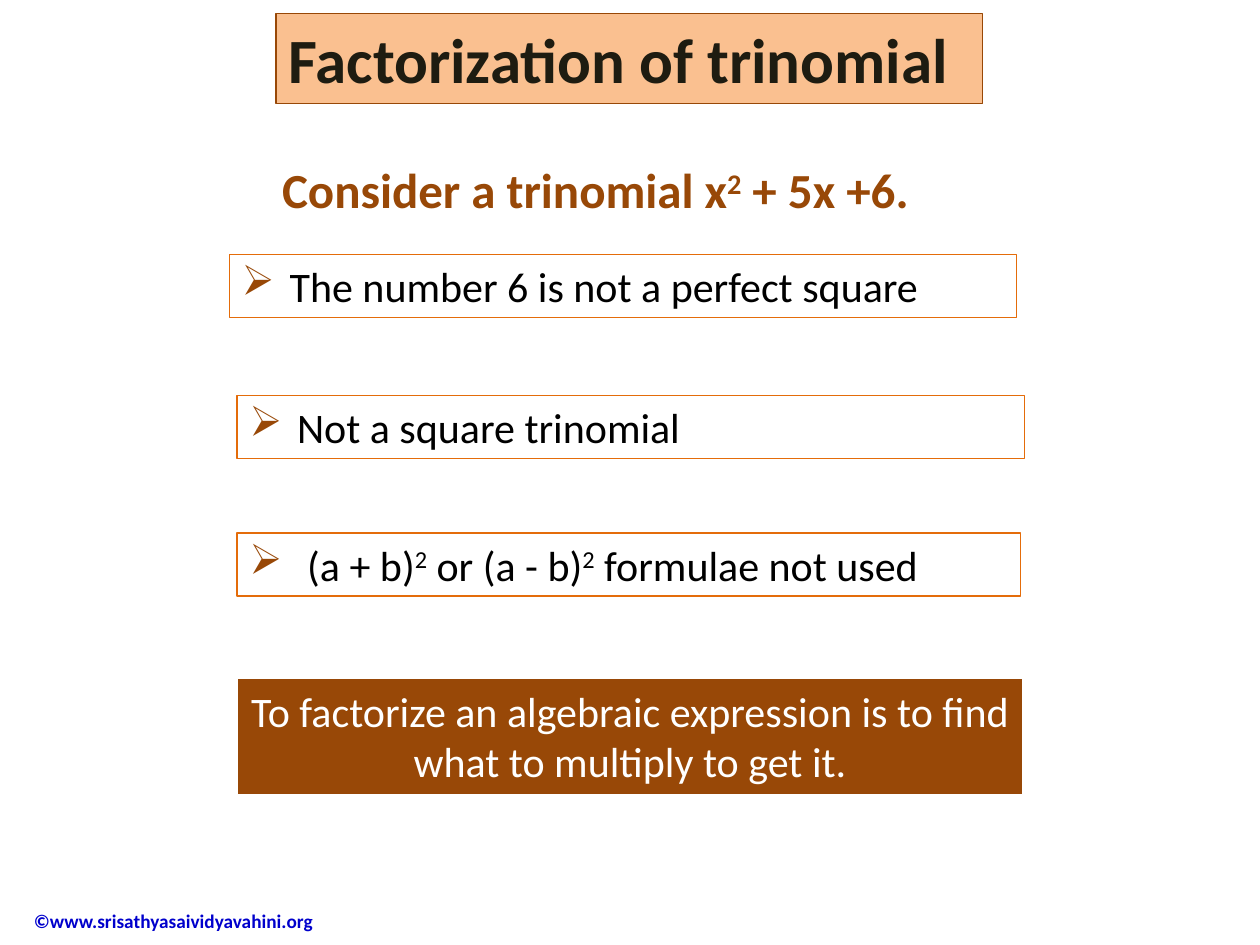
from pptx import Presentation, util as u
from pptx.dml.color import RGBColor
from pptx.enum import shapes, text
from pptx.oxml.ns import qn
from lxml import etree

THEME = dict(font="Calibri", brown="984807", peach="FAC090", orange="E46C0A",
             dark="1E1C11", black="000000", white="FFFFFF", blue="0000CC",
             title=36, lead=28, body=24, note=11)

# "^" marks the next character as a superscript.
TITLE = ("Factorization of trinomial", (2.19, 0.11, 5.61, 0.71))
LEAD = ("Consider a trinomial x^2 + 5x +6.", (2.14, 1.22, 5.35, 0.57))
# Text, place, bullet indent
POINTS = [
    ("The number 6 is not a perfect square", (1.82, 2.02, 6.25, 0.5), 0.38),
    ("Not a square trinomial", (1.88, 3.14, 6.25, 0.5), 0.38),
    ("(a + b)^2 or (a - b)^2 formulae not used", (1.88, 4.23, 6.22, 0.5), 0.46),
]
CLOSE = ("To factorize an algebraic expression is to find what to multiply "
         "to get it.", (1.89, 5.39, 6.22, 0.91))
NOTE = ("©www.srisathyasaividyavahini.org", (0.17, 7.1, 2.52, 0.41))


def rgb(name):
    return RGBColor.from_string(THEME[name])


def inches(place):
    return [u.Inches(v) for v in place]


def paint(shape, fill=None, line=None):
    if fill:
        shape.fill.solid()
        shape.fill.fore_color.rgb = rgb(fill)
    else:
        shape.fill.background()
    shape.line.color.rgb = rgb(line)
    shape.line.width = u.Pt(0.75)


def bullet(para, indent):
    """Give the paragraph a brown arrow bullet with a hanging indent."""
    props = para._p.get_or_add_pPr()
    props.set("marL", str(u.Inches(indent)))
    props.set("indent", str(-u.Inches(indent)))
    tint = etree.SubElement(props, qn("a:buClr"))
    etree.SubElement(tint, qn("a:srgbClr"), val=THEME["brown"])
    etree.SubElement(props, qn("a:buChar"), char="➢")


def write(shape, words, size="body", color="black", bold=False, wrap=True,
          align="LEFT", anchor="TOP", indent=None):
    frame = shape.text_frame
    frame.word_wrap = wrap
    frame.auto_size = text.MSO_AUTO_SIZE.NONE
    frame.vertical_anchor = getattr(text.MSO_ANCHOR, anchor)
    para = frame.paragraphs[0]
    para.alignment = getattr(text.PP_ALIGN, align)
    if indent:
        bullet(para, indent)

    def add(part, high=False):
        run = para.add_run()
        run.text = part
        font = run.font
        font.name, font.size, font.bold = THEME["font"], u.Pt(THEME[size]), bold
        font.color.rgb = rgb(color)
        if high:
            run._r.get_or_add_rPr().set("baseline", "30000")

    first, *rest = words.split("^")
    add(first)
    for part in rest:
        add(part[0], high=True)
        add(part[1:])


def main():
    deck = Presentation()
    deck.slide_width, deck.slide_height = u.Inches(10), u.Inches(7.5)
    slide = deck.slides.add_slide(deck.slide_layouts[5])

    def panel(place, **style):
        box = slide.shapes.add_shape(shapes.MSO_SHAPE.RECTANGLE, *inches(place))
        box.shadow.inherit = False
        paint(box, **style)
        return box

    def label(item, **style):
        words, place = item
        write(slide.shapes.add_textbox(*inches(place)), words, **style)

    words, place = TITLE
    head = slide.shapes.title
    head.left, head.top, head.width, head.height = inches(place)
    paint(head, fill="peach", line="brown")
    write(head, words, size="title", color="dark", bold=True)

    label(LEAD, size="lead", color="brown", bold=True, wrap=False)
    for words, place, indent in POINTS:
        write(panel(place, line="orange"), words, indent=indent)

    words, place = CLOSE
    write(panel(place, fill="brown", line="brown"), words,
          color="white", align="CENTER")
    label(NOTE, size="note", color="blue", bold=True, anchor="MIDDLE")
    deck.save("out.pptx")


if __name__ == "__main__":
    main()
